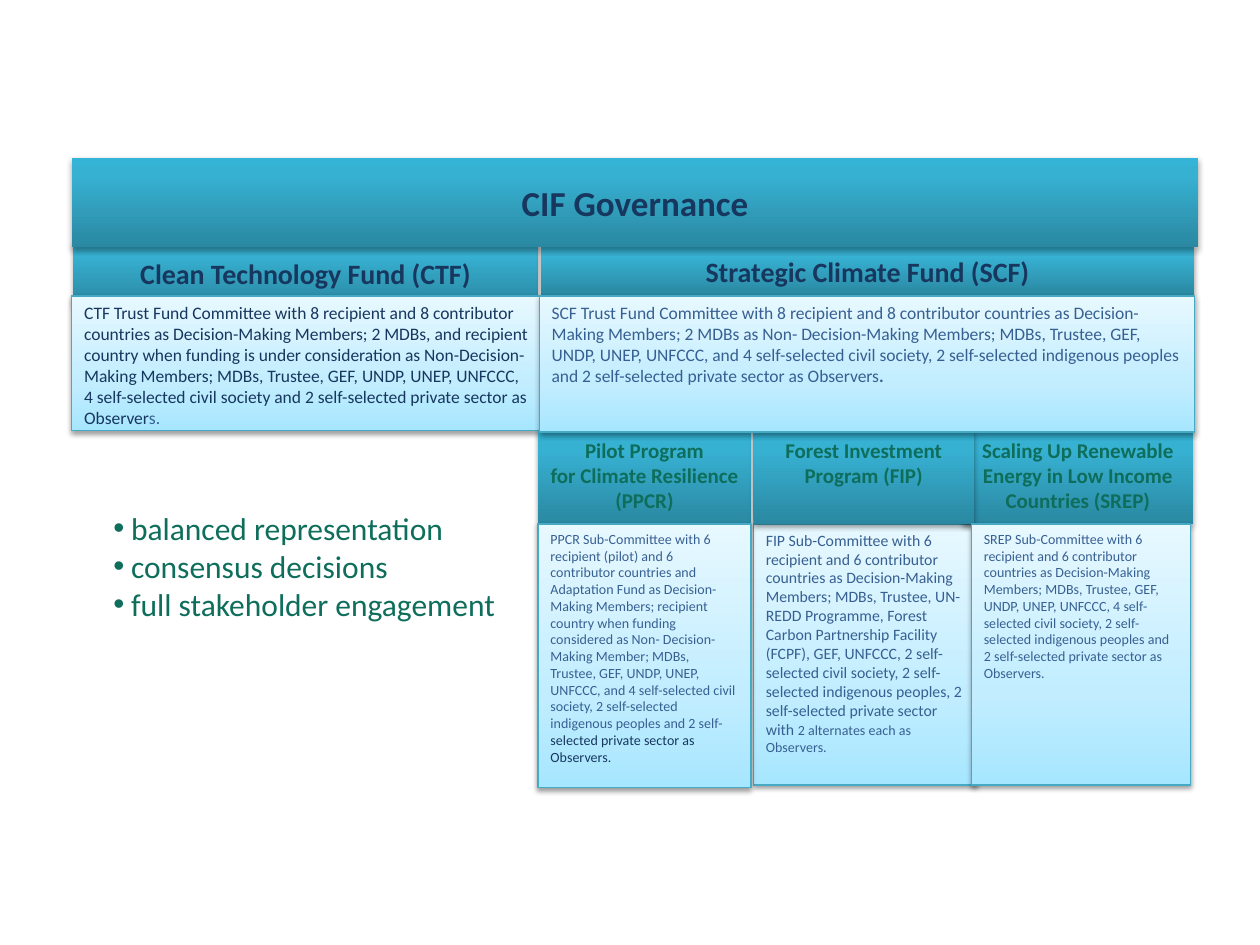
"""Build the CIF Governance slide: funds, their programs and committees."""
from lxml import etree
from pptx import Presentation
from pptx.dml.color import RGBColor
from pptx.enum.shapes import MSO_SHAPE
from pptx.enum.text import MSO_ANCHOR, MSO_AUTO_SIZE, PP_ALIGN
from pptx.util import Inches, Pt

RECT = MSO_SHAPE.RECTANGLE
TOP, MIDDLE = MSO_ANCHOR.TOP, MSO_ANCHOR.MIDDLE
LEFT, CENTER = PP_ALIGN.LEFT, PP_ALIGN.CENTER
FIXED = MSO_AUTO_SIZE.NONE
SPACE = "http://schemas.openxmlformats.org/drawingml/2006/main"
NAVY, BLUE, GREEN, EDGE = "17375E", "376092", "0E6E5B", "46AAC5"
DARK = [(0, "2A88A2"), (80, "37B1D2"), (100, "34B4D6")]
LIGHT = [(0, "A7E6FF"), (35, "C1EDFF"), (100, "E7F8FF")]


def write(par, text, size, color, bold=False):
    for i, line in enumerate(text.split("\n")):
        if i:
            par.add_line_break()
        run = par.add_run()
        run.text = line
        run.font.name = "Calibri"
        run.font.size = Pt(size)
        run.font.bold = bold
        run.font.color.rgb = RGBColor.from_string(color)


def paint(shape, stops, alpha, drop):
    props = shape.element.spPr
    marks = "".join(
        f'<a:gs pos="{pos * 1000}"><a:srgbClr val="{tint}"/></a:gs>' for pos, tint in stops)
    props.append(etree.fromstring(
        f'<a:gradFill xmlns:a="{SPACE}" rotWithShape="1"><a:gsLst>{marks}</a:gsLst>'
        '<a:lin ang="16200000" scaled="0"/></a:gradFill>'))
    shape.shadow.inherit = False
    props.find(f"{{{SPACE}}}effectLst").append(etree.fromstring(
        f'<a:outerShdw xmlns:a="{SPACE}" blurRad="{Pt(3.1)}" dist="{Pt(drop)}" dir="5400000" '
        f'rotWithShape="0"><a:srgbClr val="000000"><a:alpha val="{alpha * 1000}"/>'
        '</a:srgbClr></a:outerShdw>'))


prs = Presentation()
prs.slide_width, prs.slide_height = Inches(10), Inches(7.5)
slide = prs.slides.add_slide(prs.slide_layouts[1])
title, points = slide.placeholders

fip = [
    ("FIP Sub-Committee with 6 recipient and 6 contributor countries as Decision-Making "
     "Members; MDBs, Trustee, UN- REDD Programme, Forest Carbon Partnership Facility (FCPF), "
     "GEF, UNFCCC, 2 self- selected civil society, 2 self- selected indigenous peoples, "
     "2 self-selected private sector with ", 9, BLUE),
    ("2 alternates each as Observers.", 8, BLUE)]
ctf = [
    ("CTF Trust Fund Committee with 8 recipient and 8 contributor countries as "
     "Decision-Making Members; 2 MDBs, and recipient country when funding is under "
     "consideration as Non-Decision- Making Members; MDBs, Trustee, GEF, UNDP, UNEP, UNFCCC, "
     "4 self-selected civil society and 2 self-selected private sector as Observer", 10, NAVY),
    ("s.", 10, BLUE)]
ppcr = [
    ("PPCR Sub-Committee with 6 recipient (pilot) and 6 contributor countries and Adaptation "
     "Fund as Decision-Making Members; recipient country when funding considered as Non- "
     "Decision-Making Member; MDBs, Trustee, GEF, UNDP, UNEP, UNFCCC, and 4 self-selected "
     "civil society, 2 self-selected indigenous peoples and 2 self-", 8, BLUE),
    ("selected private sector as Observers.", 8, NAVY)]
srep = [
    ("SREP Sub-Committee with 6 recipient and 6 contributor countries as Decision-Making "
     "Members; MDBs, Trustee, GEF, UNDP, UNEP, UNFCCC, 4 self-selected civil society, 2 self- "
     "selected indigenous peoples and 2 self-selected private sector as Observers.", 8, BLUE)]
scf = [
    ("SCF Trust Fund Committee with 8 recipient and 8 contributor countries as "
     "Decision-Making Members; 2 MDBs as Non- Decision-Making Members; MDBs, Trustee, GEF, "
     "UNDP, UNEP, UNFCCC, and 4 self-selected civil society, 2 self-selected indigenous "
     "peoples and 2 self-selected private sector as Observers", 10, BLUE),
    (".", 10, BLUE, True)]

boxes = [
    ("body", 5.98, 4.16, 1.77, 2.07, fip),
    ("fund", 0.58, 1.92, 3.69, 0.5, [("Clean Technology Fund (CTF)", 16, NAVY, True)]),
    ("fund", 4.29, 1.96, 5.19, 0.38, [("Strategic Climate Fund (SCF)", 16, NAVY, True)]),
    ("body", 0.57, 2.35, 3.74, 1.07, ctf),
    ("program", 7.64, 3.42, 1.83, 0.74,
     [("Scaling Up Renewable Energy in Low Income Countries (SREP)", 12, GREEN, True)]),
    ("program", 4.27, 3.42, 1.69, 0.74,
     [("Pilot Program\nfor Climate Resilience (PPCR)", 12, GREEN, True)]),
    ("program", 5.98, 3.42, 1.75, 0.74,
     [("Forest Investment Program (FIP)", 12, GREEN, True)]),
    ("body", 4.27, 4.16, 1.69, 2.09, ppcr),
    ("body", 7.71, 4.16, 1.74, 2.07, srep),
    ("body", 4.28, 2.35, 5.2, 1.08, scf),
    ("title", 0.57, 1.25, 8.94, 0.71, [("CIF Governance", 20, NAVY, True)]),
]
for kind, x, y, w, h, runs in boxes:
    spot = [Inches(n) for n in (x, y, w, h)]
    if kind == "title":
        shape = title
        shape.left, shape.top, shape.width, shape.height = spot
        slide.shapes.element.append(shape.element)
    else:
        shape = slide.shapes.add_shape(RECT, *spot)
    if kind == "body":
        paint(shape, LIGHT, 38, 1.6)
        shape.line.color.rgb = RGBColor.from_string(EDGE)
        shape.line.width = Pt(0.75)
    else:
        paint(shape, DARK, 35, 1.8)
        shape.line.fill.background()
    frame = shape.text_frame
    frame.word_wrap = True
    frame.auto_size = FIXED
    frame.vertical_anchor = MIDDLE if kind in ("fund", "title") else TOP
    par = frame.paragraphs[0]
    par.alignment = LEFT if kind == "body" else CENTER
    for run in runs:
        write(par, *run)

points.left, points.top = Inches(0.8), Inches(3.99)
points.width, points.height = Inches(3.26), Inches(1.01)
frame = points.text_frame
frame.auto_size = FIXED
for i, text in enumerate(
        ["balanced representation", "consensus decisions", "full stakeholder engagement"]):
    par = frame.add_paragraph() if i else frame.paragraphs[0]
    props = par._p.get_or_add_pPr()
    props.set("marL", str(Inches(0.14)))
    props.set("indent", str(Inches(-0.14)))
    etree.SubElement(props, f"{{{SPACE}}}buChar", char="•")
    par.space_before = Pt(0)
    write(par, text, 18, GREEN)

prs.save("out.pptx")
